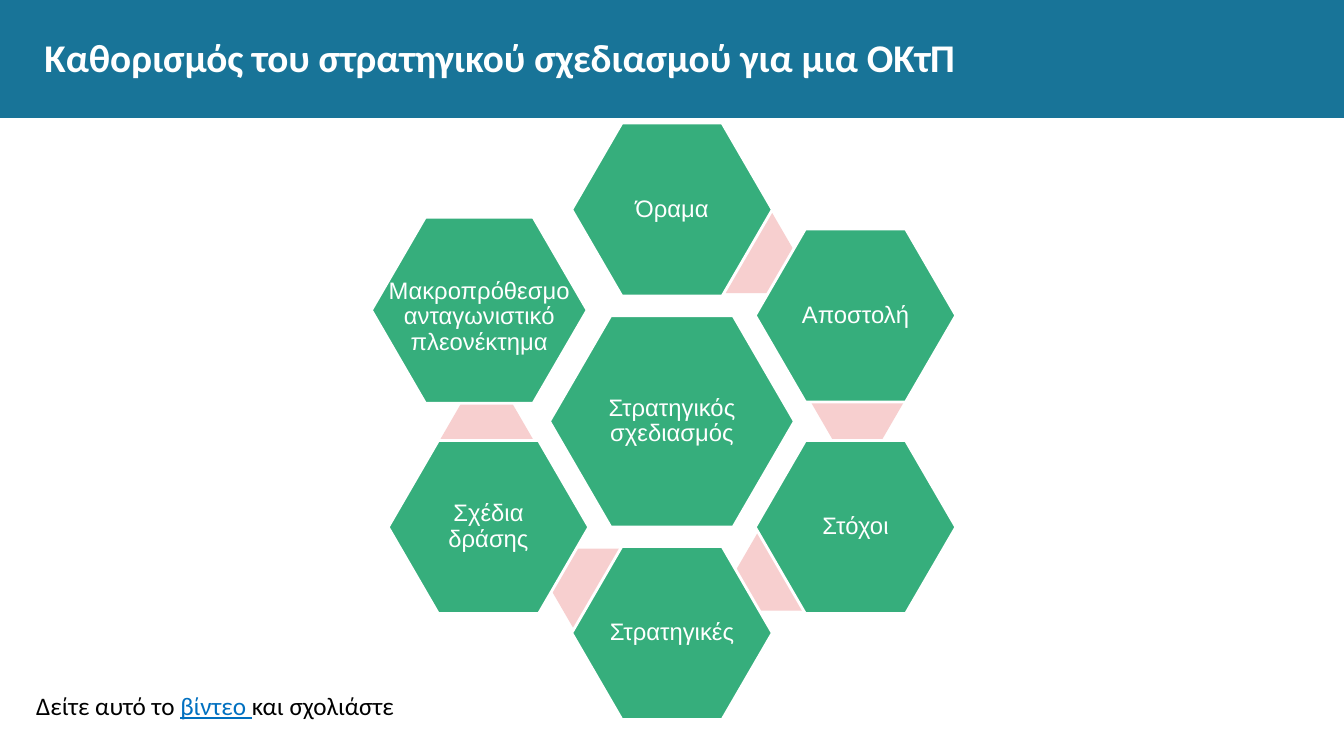
from dataclasses import dataclass

from pptx import Presentation, util as u
from pptx.dml.color import RGBColor
from pptx.enum import shapes, text

SLIDE_WIDTH, SLIDE_HEIGHT = 13.33, 7.5
BLUE, GREEN, PINK, WHITE = "187498", "36AE7C", "F7CFCF", "FFFFFF"
LINK_BLUE, BLACK = "0070C0", "000000"

# Honeycomb grid: offsets are counted in columns and rows from its centre
CENTER_X, CENTER_Y = SLIDE_WIDTH / 2, 4.18
COLUMN, ROW = 1.82, 1.05
HEIGHT_RATIO = 0.863


@dataclass(frozen=True)
class Cell:
    """A hexagon on the honeycomb grid."""
    column: float
    row: float
    width: float = 1.99
    label: str = ""
    fill: str = GREEN
    wrap: bool = True
    top_inset: float = 0.02


def accent(column: float, row: float) -> Cell:
    return Cell(column, row, width=0.92, fill=PINK)


# Each pink accent lies beneath the cell that follows it
CELLS = [
    Cell(0, 0, 2.43, "Στρατηγικός σχεδιασμός"),
    accent(0.42, -1.59),
    Cell(0, -2, label="Όραμα"),
    accent(1.01, -0.18),
    Cell(1, -1, label="Αποστολή"),
    accent(0.6, 1.41),
    Cell(1, 1, label="Στόχοι"),
    accent(-0.41, 1.58),
    Cell(0, 2, label="Στρατηγικές"),
    accent(-1.01, 0.17),
    Cell(-1, 1, label="Σχέδια δράσης"),
    Cell(-1.05, -1.05, 2.14, "Μακροπρόθεσμο\vανταγωνιστικό\vπλεονέκτημα",
         wrap=False, top_inset=0.16),
]


def color(value: str) -> RGBColor:
    return RGBColor.from_string(value)


def add_filled_shape(slide, kind, left: float, top: float, width: float,
                     height: float, fill: str):
    shape = slide.shapes.add_shape(
        kind, *map(u.Inches, (left, top, width, height)))
    shape.shadow.inherit = False
    shape.fill.solid()
    shape.fill.fore_color.rgb = color(fill)
    shape.line.fill.background()
    return shape


def set_font(font, name: str, size: float, value: str) -> None:
    font.name, font.size, font.color.rgb = name, u.Pt(size), color(value)


def set_insets(frame, left: float, top: float, right: float, bottom: float) -> None:
    frame.margin_left, frame.margin_top = u.Inches(left), u.Inches(top)
    frame.margin_right, frame.margin_bottom = u.Inches(right), u.Inches(bottom)


def add_cell(slide, cell: Cell) -> None:
    height = cell.width * HEIGHT_RATIO
    shape = add_filled_shape(
        slide, shapes.MSO_SHAPE.HEXAGON,
        CENTER_X + cell.column * COLUMN - cell.width / 2,
        CENTER_Y + cell.row * ROW - height / 2,
        cell.width, height, cell.fill)
    shape.adjustments[0] = 0.29
    if not cell.label:
        return
    shape.line.color.rgb = color(WHITE)
    shape.line.width = u.Pt(2)
    frame = shape.text_frame
    frame.word_wrap = cell.wrap
    frame.vertical_anchor = text.MSO_ANCHOR.MIDDLE
    set_insets(frame, 0.02, cell.top_inset, 0.02, 0.02)
    paragraph = frame.paragraphs[0]
    paragraph.text = cell.label
    paragraph.alignment = text.PP_ALIGN.CENTER
    paragraph.line_spacing = 0.9
    set_font(paragraph.font, "Arial", 17, WHITE)


def add_title(slide) -> None:
    band = add_filled_shape(slide, shapes.MSO_SHAPE.RECTANGLE,
                            0, 0, SLIDE_WIDTH, 1.17, BLUE)
    frame = band.text_frame
    frame.vertical_anchor = text.MSO_ANCHOR.MIDDLE
    set_insets(frame, 0.44, 0, 0.44, 0.05)
    paragraph = frame.paragraphs[0]
    paragraph.text = "Καθορισμός του στρατηγικού σχεδιασμού για μια ΟΚτΠ"
    paragraph.alignment = text.PP_ALIGN.LEFT
    set_font(paragraph.font, "Calibri", 28, WHITE)
    paragraph.font.bold = True


def add_video_note(slide) -> None:
    box = slide.shapes.add_textbox(*map(u.Inches, (0.26, 6.8, 3.83, 0.4)))
    box.text_frame.word_wrap = True
    paragraph = box.text_frame.paragraphs[0]
    set_font(paragraph.font, "Calibri", 18, BLACK)
    for words, is_link in (("Δείτε αυτό το ", False), ("βίντεο ", True),
                           ("και σχολιάστε", False)):
        run = paragraph.add_run()
        run.text = words
        if is_link:
            run.font.color.rgb = color(LINK_BLUE)
            run.font.underline = True


def main() -> None:
    presentation = Presentation()
    presentation.slide_width = u.Inches(SLIDE_WIDTH)
    presentation.slide_height = u.Inches(SLIDE_HEIGHT)
    slide = presentation.slides.add_slide(presentation.slide_layouts[6])

    add_title(slide)
    for cell in CELLS:
        add_cell(slide, cell)
    add_video_note(slide)

    presentation.save("out.pptx")


if __name__ == "__main__":
    main()
